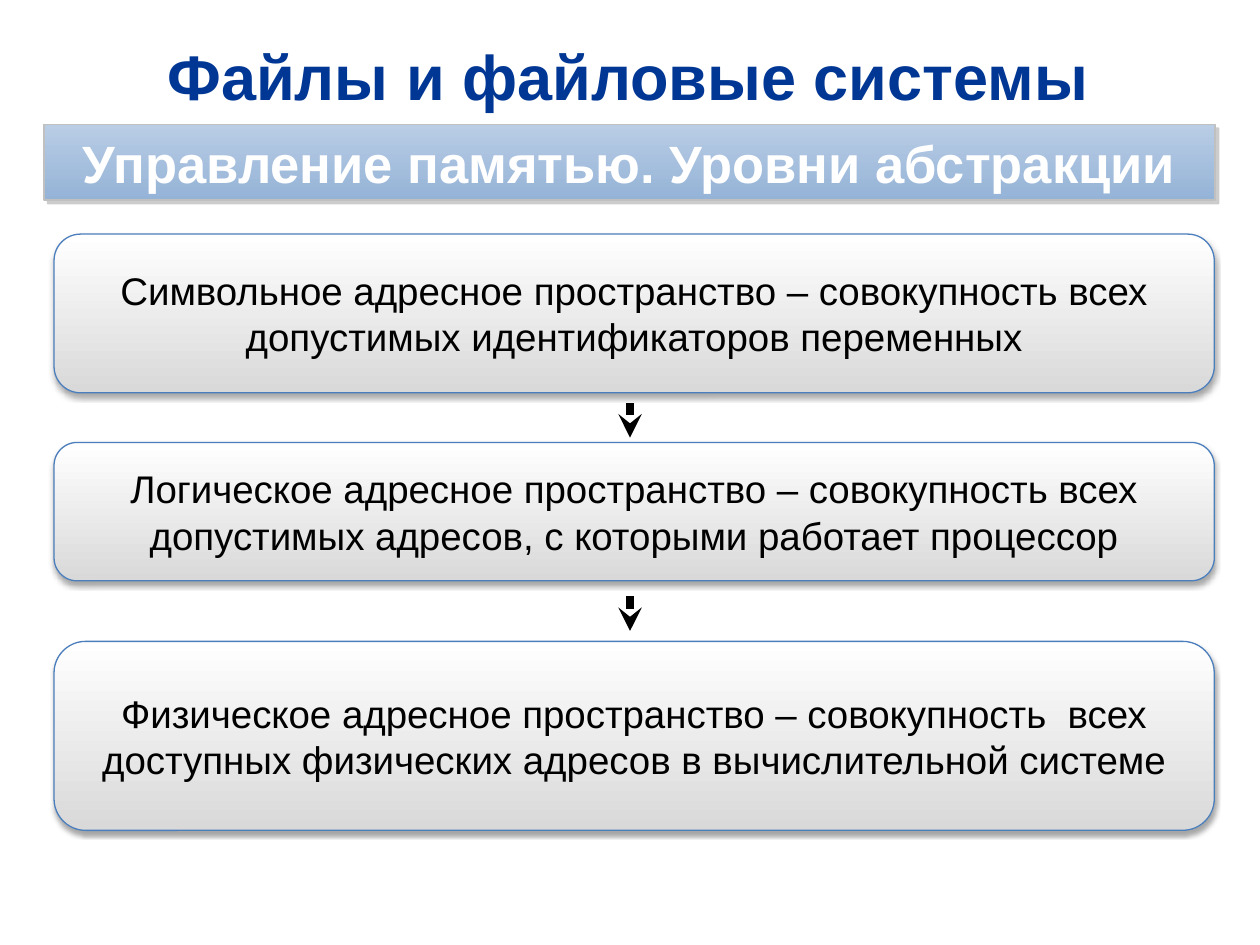
from lxml import etree
from pptx import Presentation
from pptx.dml.color import RGBColor
from pptx.enum.shapes import MSO_CONNECTOR, MSO_SHAPE
from pptx.enum.text import MSO_ANCHOR, PP_ALIGN
from pptx.oxml.ns import qn
from pptx.util import Cm, Pt

RECT, ROUNDED = MSO_SHAPE.RECTANGLE, MSO_SHAPE.ROUNDED_RECTANGLE
STRAIGHT = MSO_CONNECTOR.STRAIGHT
MIDDLE, CENTER = MSO_ANCHOR.MIDDLE, PP_ALIGN.CENTER

# Content
TITLE = "Файлы и файловые системы"
SUBTITLE = "Управление памятью. Уровни абстракции"
# (text, top, height) in cm
LEVELS = [
    ("Символьное адресное пространство – совокупность всех "
     "допустимых идентификаторов переменных", 4.72, 3.2),
    ("Логическое адресное пространство – совокупность всех "
     "допустимых адресов, с которыми работает процессор", 8.92, 2.79),
    ("Физическое адресное пространство – совокупность  всех "
     "доступных физических адресов в вычислительной системе", 12.93, 3.81),
]

# Layout in cm
SLIDE_SIZE = (25.4, 19.05)
TITLE_AREA = (0.61, 0.66, 24.1, 1.73)
BANNER_AREA = (0.89, 2.51, 23.6, 1.52)
LEVEL_LEFT, LEVEL_WIDTH = 1.09, 23.39
ARROW_X, ARROW_LENGTH, ARROW_DROP = 12.7, 0.7, 0.05

# Formats
TITLE_FONT = {"name": "Arial", "size": Pt(36), "bold": True}
BANNER_FONT = {"name": "Arial", "size": Pt(30), "bold": True}
LEVEL_FONT = {"name": "Arial", "size": Pt(22), "bold": False}
BANNER_FRAME = {"margin_left": Cm(0.61), "margin_right": Cm(0.61),
                "margin_top": Cm(0.1), "margin_bottom": Cm(0.1)}
BANNER_LOOK = {"stops": ("B9CDE5", "95B3D7"), "line": ("C0C0C0", 1),
               "shadow": ("808080", 40, 0, 3, 45)}
LEVEL_LOOK = {"stops": ("FFFFFF", "D9D9D9"), "line": ("4B7EBC", 0.75),
              "shadow": ("000000", 35, 3.1, 1.8, 90)}


def color(value):
    return RGBColor.from_string(value)


def set_all(target, values):
    for name, value in values.items():
        setattr(target, name, value)


def write(shape, text, font, text_color, frame=None):
    set_all(shape.text_frame, {"word_wrap": True, "vertical_anchor": MIDDLE,
                               **(frame or {})})
    paragraph = shape.text_frame.paragraphs[0]
    paragraph.alignment = CENTER
    run = paragraph.add_run()
    run.text = text
    set_all(run.font, font)
    run.font.color.rgb = color(text_color)


def cast_shadow(shape, shade, opacity, blur, distance, angle):
    shape.shadow.inherit = False
    effects = shape._element.spPr.find(qn("a:effectLst"))
    outer = etree.SubElement(
        effects, qn("a:outerShdw"), blurRad=str(Pt(blur)), dist=str(Pt(distance)),
        dir=str(angle * 60000), algn="tl", rotWithShape="0")
    tint = etree.SubElement(outer, qn("a:srgbClr"), val=shade)
    etree.SubElement(tint, qn("a:alpha"), val=str(opacity * 1000))


def add_panel(slide, kind, area, look):
    panel = slide.shapes.add_shape(kind, *map(Cm, area))
    panel.fill.gradient()
    panel.fill.gradient_angle = 270  # counter-clockwise, so top to bottom
    for stop, shade in zip(panel.fill.gradient_stops, look["stops"]):
        stop.color.rgb = color(shade)
    line_color, line_width = look["line"]
    panel.line.color.rgb = color(line_color)
    panel.line.width = Pt(line_width)
    cast_shadow(panel, *look["shadow"])
    return panel


def add_arrow(slide, top):
    arrow = slide.shapes.add_connector(
        STRAIGHT, *map(Cm, (ARROW_X, top, ARROW_X, top + ARROW_LENGTH)))
    arrow.line.color.rgb = color("000000")
    arrow.line.width = Pt(4.5)
    etree.SubElement(arrow.line._get_or_add_ln(), qn("a:tailEnd"), type="stealth")
    etree.SubElement(arrow._element.spPr, qn("a:effectLst"))


def main():
    deck = Presentation()
    deck.slide_width, deck.slide_height = map(Cm, SLIDE_SIZE)
    slide = deck.slides.add_slide(deck.slide_layouts[6])

    # Title and banner
    title = slide.shapes.add_textbox(*map(Cm, TITLE_AREA))
    write(title, TITLE, TITLE_FONT, "003794")
    banner = add_panel(slide, RECT, BANNER_AREA, BANNER_LOOK)
    write(banner, SUBTITLE, BANNER_FONT, "FFFFFF", BANNER_FRAME)

    # Levels of abstraction
    for text, top, height in LEVELS:
        level = add_panel(slide, ROUNDED, (LEVEL_LEFT, top, LEVEL_WIDTH, height),
                          LEVEL_LOOK)
        write(level, text, LEVEL_FONT, "000000")

    # One arrow in the middle of each gap
    for (_, top, height), (_, next_top, _) in zip(LEVELS, LEVELS[1:]):
        gap_middle = (top + height + next_top) / 2
        add_arrow(slide, gap_middle + ARROW_DROP - ARROW_LENGTH / 2)

    deck.save("out.pptx")


if __name__ == "__main__":
    main()
